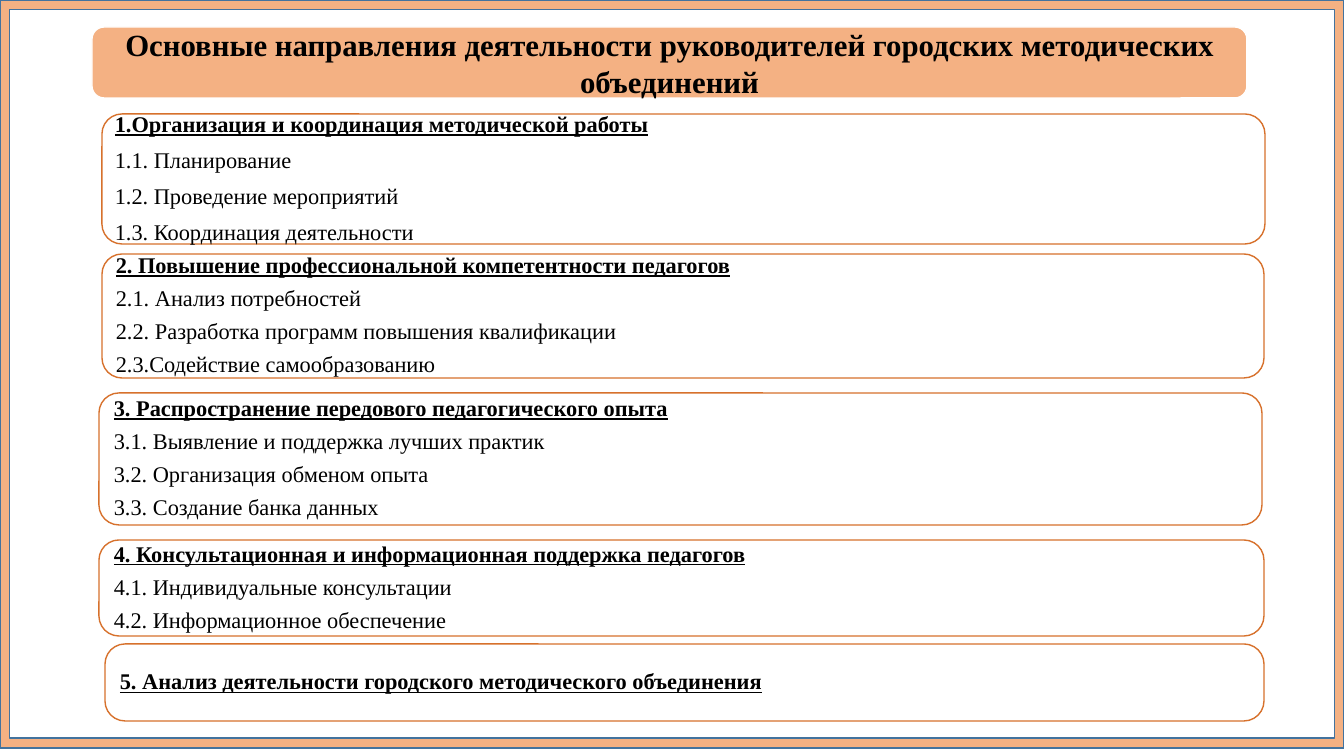
from pptx import Presentation
from pptx.dml.color import RGBColor
from pptx.enum.shapes import MSO_SHAPE
from pptx.enum.text import MSO_ANCHOR, MSO_AUTO_SIZE, PP_ALIGN
from pptx.util import Pt

PX = 914400 / 100.8  # EMU in one px
FONT = "Times New Roman"
BLACK = RGBColor(0x00, 0x00, 0x00)
WHITE = RGBColor(0xFF, 0xFF, 0xFF)
PEACH = RGBColor(0xF4, 0xB1, 0x83)
ORANGE = RGBColor(0xD7, 0x71, 0x2C)
BLUE = RGBColor(0x43, 0x73, 0x9E)
RADIUS = 20
CORNER_INSET = 6  # text inset caused by the rounded corner

TITLE = "Основные направления деятельности руководителей городских методических объединений"

# left, top, right, height, text left, line spacing of the items, heading, items
DIRECTIONS = [
    (102, 114, 1265, 130, 115, 1.0, "1.Организация и координация методической работы",
     ["1.1. Планирование", "1.2. Проведение мероприятий", "1.3. Координация деятельности"]),
    (102, 254, 1264, 124, 116, 0.9, "2. Повышение профессиональной компетентности педагогов",
     ["2.1. Анализ потребностей", "2.2. Разработка программ повышения квалификации",
      "2.3.Содействие самообразованию"]),
    (99, 393, 1262, 132, 114, 0.9, "3. Распространение передового педагогического опыта",
     ["3.1. Выявление и поддержка лучших практик", "3.2. Организация обменом опыта",
      "3.3. Создание банка данных"]),
    (99, 540, 1264, 96, 114, 0.9, "4. Консультационная и информационная поддержка педагогов",
     ["4.1. Индивидуальные консультации", "4.2. Информационное обеспечение"]),
    (105, 644, 1264, 77, 120, 0.9, "5. Анализ деятельности городского методического объединения", []),
]


def px(n):
    return round(n * PX)


def add_box(s, kind, x, y, w, h, fill, line, adjust):
    sp = s.shapes.add_shape(kind, px(x), px(y), px(w), px(h))
    sp.adjustments[0] = adjust
    sp.shadow.inherit = False
    sp.fill.solid()
    sp.fill.fore_color.rgb = fill
    sp.line.color.rgb = line
    sp.line.width = Pt(1)
    return sp


def setup_frame(tf, left=0):
    tf.word_wrap = True
    tf.auto_size = MSO_AUTO_SIZE.NONE
    tf.vertical_anchor = MSO_ANCHOR.MIDDLE
    tf.margin_left = px(left)
    tf.margin_right = tf.margin_top = tf.margin_bottom = 0


def write(p, text, size=16, bold=False, underline=False, align=PP_ALIGN.LEFT,
          spacing=0.9, after=6.4):
    p.alignment = align
    p.line_spacing = spacing
    p.space_before = Pt(0)
    p.space_after = Pt(after)
    r = p.add_run()
    r.text = text
    r.font.name = FONT
    r.font.size = Pt(size)
    r.font.bold = bold
    r.font.underline = underline
    r.font.color.rgb = BLACK


def add_title(s):
    add_box(s, MSO_SHAPE.ROUNDED_RECTANGLE, 92, 27, 1155, 71, PEACH, WHITE, 0.17)
    title = s.shapes.title
    title.left, title.top, title.width, title.height = px(95), px(30), px(1149), px(65)
    setup_frame(title.text_frame)
    write(title.text_frame.paragraphs[0], TITLE, size=22, bold=True,
          align=PP_ALIGN.CENTER, spacing=1.0, after=0)
    # Bring the title in front of its bar
    s.shapes._spTree.append(title._element)


def add_direction(s, x, y, right, h, text_x, spacing, heading, items):
    sp = add_box(s, MSO_SHAPE.ROUNDED_RECTANGLE, x, y, right - x, h, WHITE, ORANGE, RADIUS / h)
    tf = sp.text_frame
    setup_frame(tf, left=text_x - x - CORNER_INSET)
    write(tf.paragraphs[0], heading, bold=True, underline=True)
    for item in items:
        write(tf.add_paragraph(), item, spacing=spacing)


def main():
    prs = Presentation()
    prs.slide_width, prs.slide_height = px(1344), px(756)
    s = prs.slides.add_slide(prs.slide_layouts[5])

    # Heading and the five directions
    add_title(s)
    for direction in DIRECTIONS:
        add_direction(s, *direction)

    # Frame around the slide
    add_box(s, MSO_SHAPE.FRAME, 0, 0, 1344, 748, PEACH, BLUE, 0.013)

    prs.save("out.pptx")


if __name__ == "__main__":
    main()
